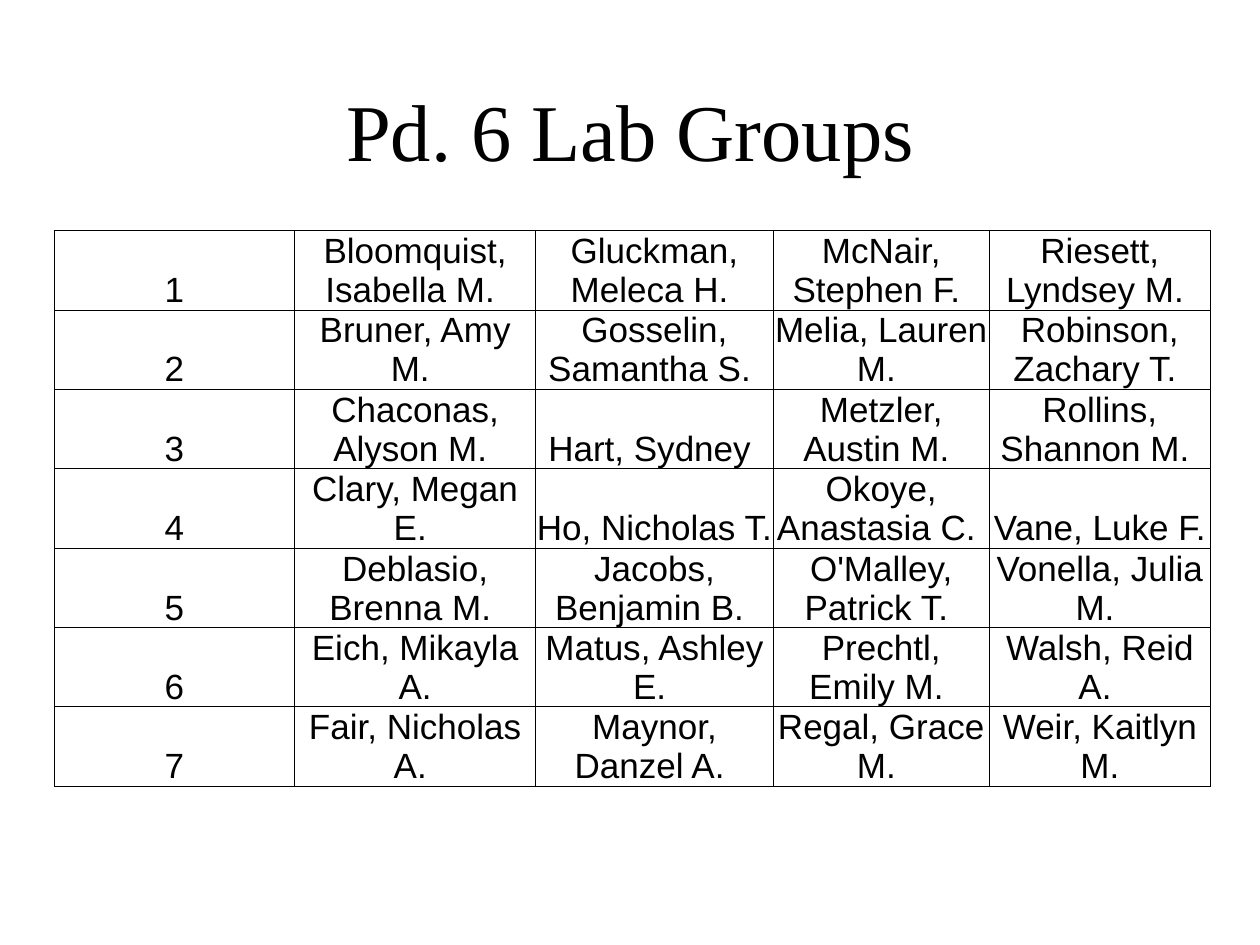
from lxml import etree
from pptx import Presentation
from pptx.dml.color import RGBColor
from pptx.enum.text import MSO_ANCHOR, PP_ALIGN
from pptx.oxml.ns import qn
from pptx.util import Inches, Pt

CENTER = PP_ALIGN.CENTER
MIDDLE, BOTTOM = MSO_ANCHOR.MIDDLE, MSO_ANCHOR.BOTTOM
BLACK, WHITE = "000000", "FFFFFF"
COLUMN_WIDTHS = [1.91, 1.91, 1.89, 1.71, 1.76]
ROW_HEIGHT = 0.63
GROUPS = [
    ["Bloomquist, Isabella M. ", "Gluckman, Meleca H. ", "McNair, Stephen F. ", "Riesett, Lyndsey M. "],
    ["Bruner, Amy M. ", "Gosselin, Samantha S. ", "Melia, Lauren M. ", "Robinson, Zachary T. "],
    ["Chaconas, Alyson M. ", "Hart, Sydney ", "Metzler, Austin M. ", "Rollins, Shannon M. "],
    ["Clary, Megan E. ", "Ho, Nicholas T. ", "Okoye, Anastasia C. ", "Vane, Luke F. "],
    ["Deblasio, Brenna M. ", "Jacobs, Benjamin B. ", "O'Malley, Patrick T. ", "Vonella, Julia M. "],
    ["Eich, Mikayla A.", "Matus, Ashley E. ", "Prechtl, Emily M. ", "Walsh, Reid A. "],
    ["Fair, Nicholas A. ", "Maynor, Danzel A. ", "Regal, Grace M. ", "Weir, Kaitlyn M."],
]


def color(value):
    return RGBColor.from_string(value)


def write(frame, text, font_name, size):
    frame.text = text
    para = frame.paragraphs[0]
    para.alignment = CENTER
    para.font.name = font_name
    para.font.size = Pt(size)
    para.font.color.rgb = color(BLACK)


deck = Presentation()
deck.slide_width, deck.slide_height = Inches(10), Inches(7.5)
slide = deck.slides.add_slide(deck.slide_layouts[5])
slide.background.fill.solid()
slide.background.fill.fore_color.rgb = color(WHITE)

title = slide.shapes.title
title.left, title.top = Inches(1), Inches(0.55)
title.width, title.height = Inches(8), Inches(0.95)
write(title.text_frame, "Pd. 6 Lab Groups", "Times New Roman", 46)
title.text_frame.vertical_anchor = MIDDLE

table = slide.shapes.add_table(
    len(GROUPS), len(COLUMN_WIDTHS), Inches(0.43), Inches(1.83),
    Inches(sum(COLUMN_WIDTHS)), Inches(ROW_HEIGHT * len(GROUPS)),
).table
table.first_row = False
table.horz_banding = False
for column, width in zip(table.columns, COLUMN_WIDTHS):
    column.width = Inches(width)

for number, (row, names) in enumerate(zip(table.rows, GROUPS), start=1):
    row.height = Inches(ROW_HEIGHT)
    for cell, text in zip(row.cells, [str(number), *names]):
        write(cell.text_frame, text, "Arial", 20)
        cell.vertical_anchor = BOTTOM
        cell.margin_left = cell.margin_right = cell.margin_top = Inches(0.01)
        cell.margin_bottom = 0
        properties = cell._tc.get_or_add_tcPr()
        for side in ("a:lnL", "a:lnR", "a:lnT", "a:lnB"):
            border = etree.SubElement(properties, qn(side), w=str(Pt(0.5)))
            border_fill = etree.SubElement(border, qn("a:solidFill"))
            etree.SubElement(border_fill, qn("a:srgbClr"), val=BLACK)
        cell.fill.background()

deck.save("out.pptx")
